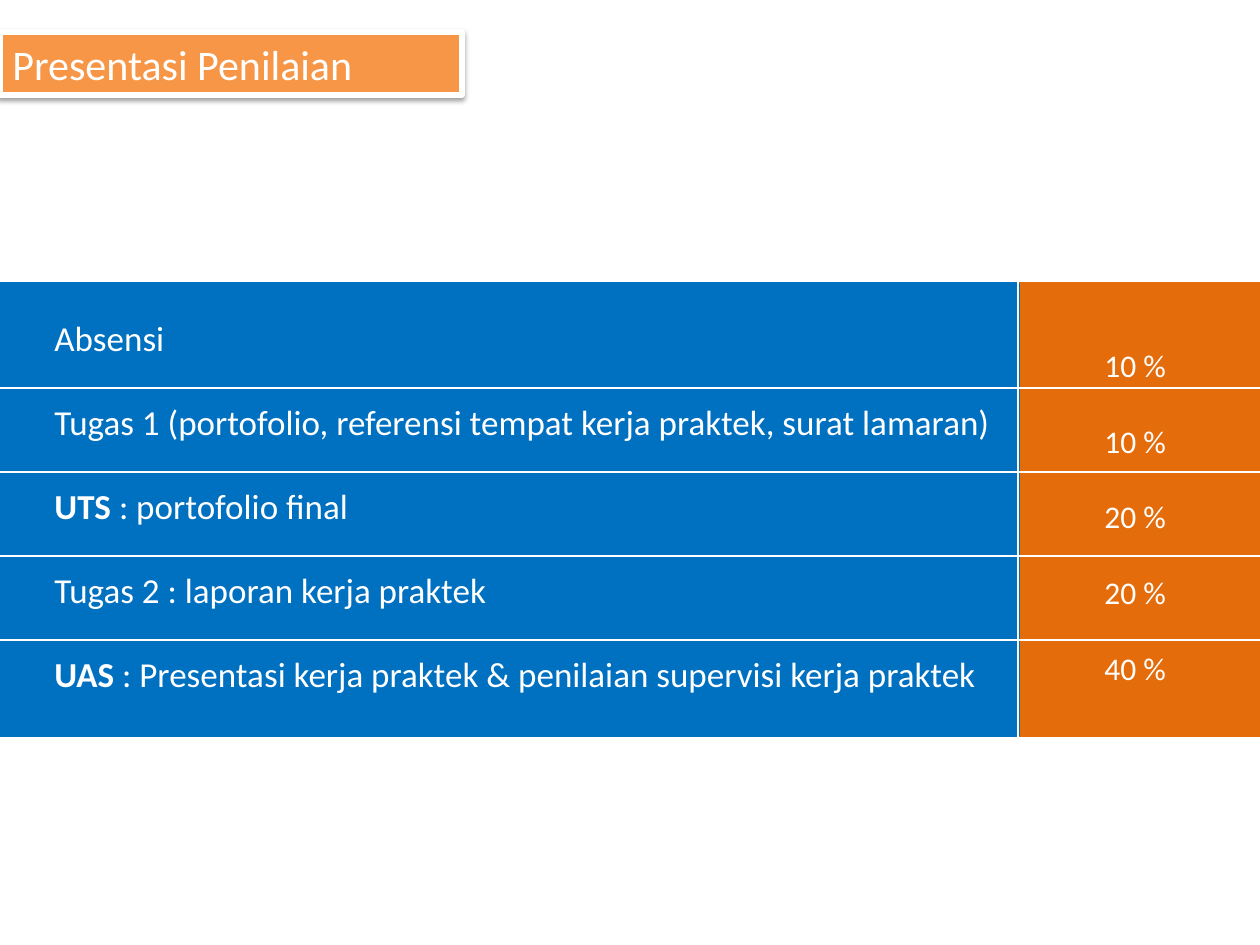
from dataclasses import dataclass

from lxml.etree import SubElement
from pptx import Presentation
from pptx.dml.color import RGBColor
from pptx.enum.shapes import MSO_CONNECTOR, MSO_SHAPE
from pptx.enum.text import PP_ALIGN
from pptx.oxml.ns import qn
from pptx.util import Emu, Pt

TITLE = "Presentasi Penilaian"
# bold lead, rest of the label, weight
ASSESSMENTS = [
    ("", "Absensi", "10 %"),
    ("", "Tugas 1 (portofolio, referensi tempat kerja praktek, surat lamaran)", "10 %"),
    ("UTS ", ": portofolio final", "20 %"),
    ("", "Tugas 2 : laporan kerja praktek", "20 %"),
    ("UAS", " : Presentasi kerja praktek & penilaian supervisi kerja praktek", "40 %"),
]


@dataclass(frozen=True)
class Theme:
    font: str = "Calibri"
    white: RGBColor = RGBColor(0xFF, 0xFF, 0xFF)
    label_fill: RGBColor = RGBColor(0x00, 0x70, 0xC0)
    weight_fill: RGBColor = RGBColor(0xE4, 0x6C, 0x0A)
    title_fill: RGBColor = RGBColor(0xF7, 0x96, 0x46)
    title_size: int = 24
    label_size: int = 20
    weight_size: int = 18


THEME = Theme()
SLIDE_W, SLIDE_H = 1260, 945
PANEL_TOP, PANEL_H = 284, 451
SPLIT_X = 1018
FIRST_RULE_Y, ROW_STEP = 388, 84
RULE_LEFT, RULE_RIGHT = -10, 1281
DIVIDER_TOP, DIVIDER_BOTTOM = 94, 809
LINE_HEIGHT = 1.2


def px(length):
    return Emu(length * 914400 // 126)


def add_panel(slide, left, top, width, height, fill, line, line_width):
    panel = slide.shapes.add_shape(
        MSO_SHAPE.RECTANGLE, px(left), px(top), px(width), px(height))
    panel.shadow.inherit = False
    panel.fill.solid()
    panel.fill.fore_color.rgb = fill
    panel.line.color.rgb = line
    panel.line.width = Pt(line_width)
    return panel


def write_paragraph(paragraph, parts, size):
    """Fill a paragraph with (text, bold) parts."""
    paragraph.alignment = PP_ALIGN.LEFT
    for text, bold in parts:
        if text:
            run = paragraph.add_run()
            run.text = text
            run.font.name = THEME.font
            run.font.size = Pt(size)
            run.font.bold = bold
            run.font.color.rgb = THEME.white


def add_column(slide, left, top, width, height, entries, size):
    """Write entries below each other, one blank line's height apart."""
    frame = slide.shapes.add_textbox(px(left), px(top), px(width), px(height)).text_frame
    frame.word_wrap = True
    for index, parts in enumerate(entries):
        paragraph = frame.add_paragraph() if index else frame.paragraphs[0]
        if index:
            paragraph.space_before = Pt(size * LINE_HEIGHT)
        write_paragraph(paragraph, parts, size)


def add_rule(slide, x1, y1, x2, y2):
    rule = slide.shapes.add_connector(
        MSO_CONNECTOR.STRAIGHT, px(x1), px(y1), px(x2), px(y2))
    rule.line.color.rgb = THEME.white
    rule.line.width = Pt(0.75)
    SubElement(rule._element.spPr, qn("a:effectLst"))


def add_soft_shadow(shape):
    effects = shape._element.spPr.find(qn("a:effectLst"))
    shadow = SubElement(effects, qn("a:outerShdw"), blurRad=str(Pt(3.1)),
                        dist=str(Pt(1.6)), dir="5400000", rotWithShape="0")
    color = SubElement(shadow, qn("a:srgbClr"), val="000000")
    SubElement(color, qn("a:alpha"), val="38000")


def main():
    deck = Presentation()
    deck.slide_width, deck.slide_height = px(SLIDE_W), px(SLIDE_H)
    slide = deck.slides.add_slide(deck.slide_layouts[6])

    for left, right, fill in ((SPLIT_X, SLIDE_W, THEME.weight_fill),
                              (0, SPLIT_X, THEME.label_fill)):
        add_panel(slide, left, PANEL_TOP, right - left, PANEL_H, fill, fill, 2)

    labels = [[(lead, True), (rest, False)] for lead, rest, _ in ASSESSMENTS]
    weights = [[(weight, False)] for _, _, weight in ASSESSMENTS]
    add_column(slide, 42, 310, 976, 394, labels, THEME.label_size)
    add_column(slide, 1092, 340, 136, 394, weights, THEME.weight_size)

    for row in range(len(ASSESSMENTS) - 1):
        y = FIRST_RULE_Y + row * ROW_STEP
        add_rule(slide, RULE_LEFT, y, RULE_RIGHT, y)
    add_rule(slide, SPLIT_X, DIVIDER_TOP, SPLIT_X, DIVIDER_BOTTOM)

    title = add_panel(slide, 0, 32, 462, 63, THEME.title_fill, THEME.white, 3)
    add_soft_shadow(title)
    write_paragraph(title.text_frame.paragraphs[0], [(TITLE, False)], THEME.title_size)

    deck.save("out.pptx")


if __name__ == "__main__":
    main()
